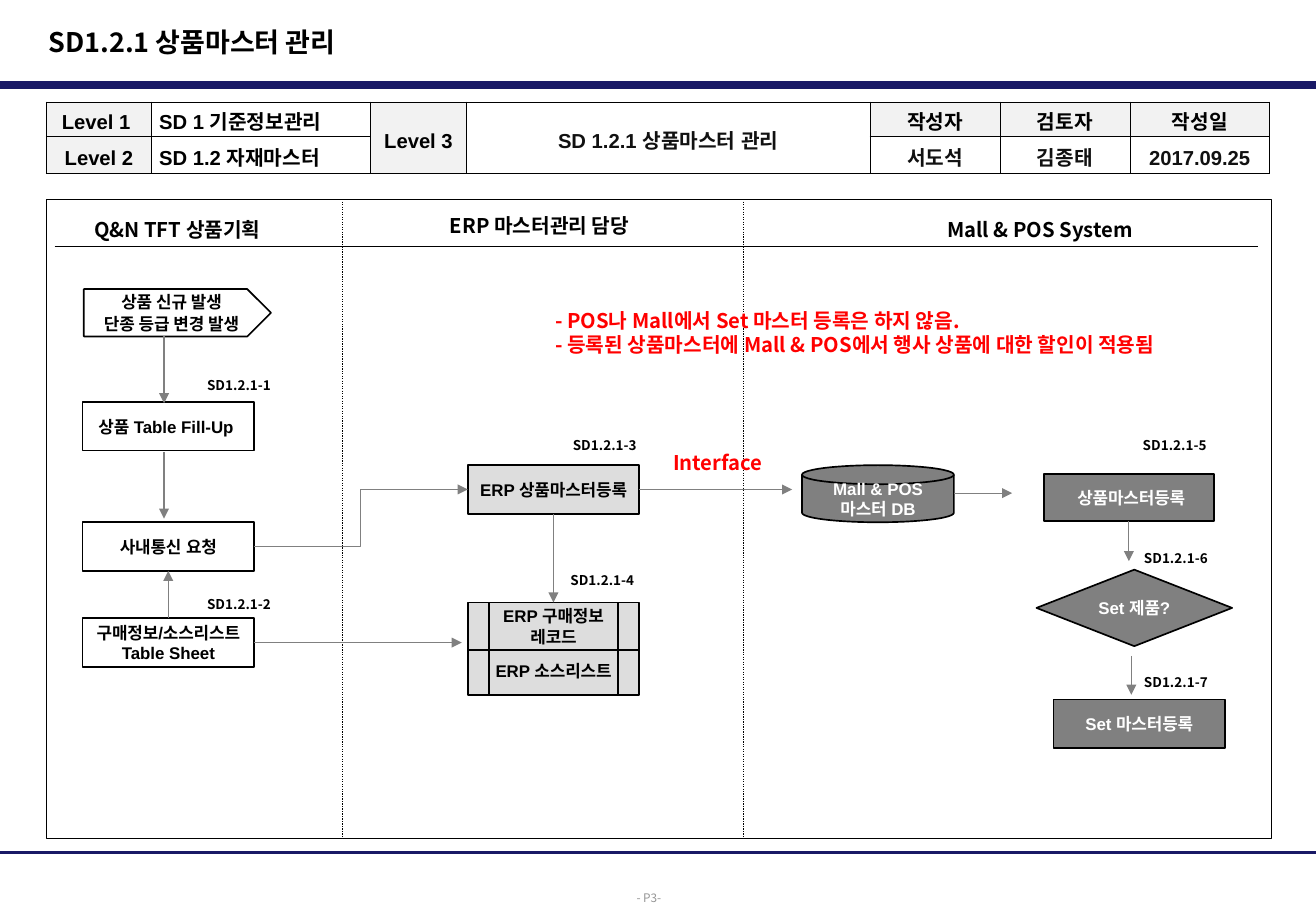
"""Build the product master process flow slide."""
import dataclasses
import typing

import lxml.etree
import pptx
import pptx.dml.color
import pptx.enum.dml
import pptx.enum.shapes
import pptx.enum.text
import pptx.oxml.ns
import pptx.shapes.autoshape
import pptx.shapes.connector
import pptx.slide
import pptx.table
import pptx.text.text
import pptx.util

Inches = pptx.util.Inches
Pt = pptx.util.Pt
Kind = pptx.enum.shapes.MSO_SHAPE
Link = pptx.enum.shapes.MSO_CONNECTOR
Align = pptx.enum.text.PP_ALIGN
Anchor = pptx.enum.text.MSO_ANCHOR
NOTO = "Noto Sans CJK KR"
ARIAL = "Arial"
BLACK, WHITE, RED, NAVY = "000000", "FFFFFF", "FF0000", "191966"
GRAY, SILVER, PALE, INK = "808080", "DDDDDD", "F2F2F2", "111111"


@dataclasses.dataclass
class Step:
    """A box of the flow."""
    name: str
    kind: Kind
    left: float
    top: float
    text: str
    fill: str
    width: float = 1.41
    height: float = 0.4
    color: str = BLACK
    font: str = ARIAL
    space: float = 0


@dataclasses.dataclass
class Note:
    """A free text on the slide."""
    left: float
    top: float
    width: float
    height: float
    text: str
    size: float = 12
    color: str = BLACK
    align: Align = Align.CENTER
    lead: float = 1.0
    bold: bool = True
    side: float = 0.1
    edge: float = 0.05
    wrap: bool = True


@dataclasses.dataclass
class Arrow:
    """An arrow with optional joined ends, each a box name and a site."""
    start: tuple[float, float]
    end: tuple[float, float]
    tail: typing.Optional[tuple[str, int]] = None
    head: typing.Optional[tuple[str, int]] = None
    kind: Link = Link.STRAIGHT


@dataclasses.dataclass
class Cell:
    """A cell of the header table."""
    row: int
    col: int
    text: str
    fill: str = ""
    color: str = BLACK
    align: Align = Align.CENTER
    tall: bool = False


def tint(code: str) -> pptx.dml.color.RGBColor:
    """Turn a hex string into a colour."""
    return pptx.dml.color.RGBColor.from_string(code)


def write(frame: pptx.text.text.TextFrame, text: str, size: float, color: str, font: str,
          align: Align, lead: float = 1.0, bold: bool = True, space: float = 0) -> None:
    """Fill a text frame, one paragraph per line."""
    for index, line in enumerate(text.split("\n")):
        para = frame.paragraphs[0] if index == 0 else frame.add_paragraph()
        para.alignment = align
        para.line_spacing = lead
        para.space_before = Pt(space if index else 0)
        run = para.add_run()
        run.text = line
        run.font.size = Pt(size)
        run.font.bold = bold
        run.font.name = font
        run.font.color.rgb = tint(color)
        east = lxml.etree.SubElement(run.font._element, pptx.oxml.ns.qn("a:ea"))
        east.set("typeface", font)


def inset(frame: pptx.text.text.TextFrame, side: float, edge: float) -> None:
    """Set the margins of a text frame."""
    frame.margin_left = frame.margin_right = Inches(side)
    frame.margin_top = frame.margin_bottom = Inches(edge)


def draw_step(slide: pptx.slide.Slide, step: Step) -> pptx.shapes.autoshape.Shape:
    """Draw one box of the flow."""
    shape = slide.shapes.add_shape(step.kind, Inches(step.left), Inches(step.top),
                                   Inches(step.width), Inches(step.height))
    shape.shadow.inherit = False
    shape.fill.solid()
    shape.fill.fore_color.rgb = tint(step.fill)
    shape.line.color.rgb = tint(BLACK)
    shape.line.width = Pt(1)
    frame = shape.text_frame
    frame.word_wrap = True
    frame.vertical_anchor = Anchor.MIDDLE
    inset(frame, 0.04, 0.05)
    write(frame, step.text, 10, step.color, step.font, Align.CENTER, space=step.space)
    return shape


def draw_note(slide: pptx.slide.Slide, note: Note) -> None:
    """Draw one free text."""
    box = slide.shapes.add_textbox(Inches(note.left), Inches(note.top),
                                   Inches(note.width), Inches(note.height))
    frame = box.text_frame
    frame.word_wrap = note.wrap
    frame.auto_size = pptx.enum.text.MSO_AUTO_SIZE.SHAPE_TO_FIT_TEXT
    inset(frame, note.side, note.edge)
    write(frame, note.text, note.size, note.color, NOTO, note.align, note.lead, note.bold)


def draw_line(slide: pptx.slide.Slide, start: tuple[float, float], end: tuple[float, float],
              color: str, width: float, kind: Link = Link.STRAIGHT) -> pptx.shapes.connector.Connector:
    """Draw a line without shadow."""
    line = slide.shapes.add_connector(kind, *map(Inches, start + end))
    line.line.color.rgb = tint(color)
    line.line.width = Pt(width)
    lxml.etree.SubElement(line._element.spPr, pptx.oxml.ns.qn("a:effectLst"))
    return line


def draw_arrow(slide: pptx.slide.Slide, arrow: Arrow,
               boxes: dict[str, pptx.shapes.autoshape.Shape]) -> None:
    """Draw one arrow and join its ends."""
    line = draw_line(slide, arrow.start, arrow.end, GRAY, 0.75, arrow.kind)
    tip = lxml.etree.SubElement(line.line._get_or_add_ln(), pptx.oxml.ns.qn("a:tailEnd"))
    tip.set("type", "triangle")
    if arrow.tail:
        line.begin_connect(boxes[arrow.tail[0]], arrow.tail[1])
    if arrow.head:
        line.end_connect(boxes[arrow.head[0]], arrow.head[1])


def rule_cell(cell: pptx.table._Cell) -> None:
    """Give a cell thin black borders and no fill."""
    props = cell._tc.get_or_add_tcPr()
    for side in ("lnL", "lnR", "lnT", "lnB"):
        line = lxml.etree.SubElement(props, pptx.oxml.ns.qn(f"a:{side}"), w=str(Pt(0.5)))
        fill = lxml.etree.SubElement(line, pptx.oxml.ns.qn("a:solidFill"))
        lxml.etree.SubElement(fill, pptx.oxml.ns.qn("a:srgbClr"), val=BLACK)
    cell.fill.background()


def draw_table(slide: pptx.slide.Slide, cells: list[Cell]) -> None:
    """Draw the header table."""
    wide, high = (0.87, 1.8, 0.79, 3.32, 1.07, 1.07, 1.15), (0.28, 0.31)
    table = slide.shapes.add_table(len(high), len(wide), Inches(0.38), Inches(0.84),
                                   Inches(sum(wide)), Inches(sum(high))).table
    table.first_row = table.horz_banding = False
    for col, width in zip(table.columns, wide):
        col.width = Inches(width)
    for row, height in zip(table.rows, high):
        row.height = Inches(height)
    for cell in table.iter_cells():
        rule_cell(cell)
    for item in cells:
        cell = table.cell(item.row, item.col)
        if item.tall:
            cell.merge(table.cell(item.row + 1, item.col))
        cell.vertical_anchor = Anchor.MIDDLE
        cell.margin_left = cell.margin_right = Inches(0.06)
        cell.margin_top = cell.margin_bottom = Inches(0.01)
        if item.fill:
            cell.fill.solid()
            cell.fill.fore_color.rgb = tint(item.fill)
        write(cell.text_frame, item.text, 12, item.color, ARIAL, item.align, 1.3)


CELLS = [
    Cell(0, 0, "Level 1 ", PALE), Cell(0, 1, "SD 1 기준정보관리", align=Align.LEFT),
    Cell(0, 2, "Level 3", PALE, tall=True),
    Cell(0, 3, "SD 1.2.1 상품마스터 관리", color=INK, tall=True),
    Cell(0, 4, "작성자", PALE), Cell(0, 5, "검토자", PALE), Cell(0, 6, "작성일", PALE),
    Cell(1, 0, "Level 2", PALE), Cell(1, 1, "SD 1.2 자재마스터", align=Align.LEFT),
    Cell(1, 4, "서도석", color=INK), Cell(1, 5, "김종태", color=INK),
    Cell(1, 6, "2017.09.25", color=INK),
]
RECT, TWIN = Kind.RECTANGLE, Kind.FLOWCHART_PREDEFINED_PROCESS
STEPS = [
    Step("Start", Kind.PENTAGON, 0.69, 2.38, "상품 신규 발생\n단종 등급 변경 발생", WHITE,
         1.54, 0.39, font=NOTO, space=1),
    Step("Fill", RECT, 0.68, 3.31, "상품 Table Fill-Up ", WHITE),
    Step("Request", RECT, 0.68, 4.3, "사내통신 요청", WHITE),
    Step("Sheet", RECT, 0.68, 5.09, "구매정보/소스리스트\nTable Sheet", WHITE),
    Step("Master", RECT, 3.85, 3.83, "ERP 상품마스터등록", SILVER),
    Step("Source", TWIN, 3.85, 5.33, "ERP 소스리스트", SILVER, height=0.39),
    Step("Record", TWIN, 3.85, 4.96, "ERP 구매정보\n레코드", SILVER, height=0.39),
    Step("Store", Kind.FLOWCHART_MAGNETIC_DISK, 6.6, 3.83, "Mall & POS\n마스터 DB", GRAY,
         1.25, 0.47, WHITE),
    Step("Entry", RECT, 8.59, 3.9, " 상품마스터등록", GRAY, 1.4, 0.39, WHITE),
    Step("Choice", Kind.DIAMOND, 8.53, 4.69, "Set 제품?", GRAY, 1.61, 0.63, WHITE),
    Step("Set", RECT, 8.67, 5.76, "Set 마스터등록", GRAY, color=WHITE),
]
ARROWS = [
    Arrow((1.35, 2.77), (1.35, 3.32)),
    Arrow((1.35, 3.72), (1.35, 4.27)),
    Arrow((2.09, 4.5), (3.85, 4.03), ("Request", 3), ("Master", 1), Link.ELBOW),
    Arrow((5.26, 4.03), (6.52, 4.03), ("Master", 3)),
    Arrow((7.85, 4.06), (8.33, 4.06)),
    Arrow((9.29, 4.29), (9.29, 4.62), ("Entry", 2)),
    Arrow((9.31, 5.4), (9.31, 5.72)),
    Arrow((1.38, 5.09), (1.38, 4.7), ("Sheet", 0), ("Request", 2)),
    Arrow((2.09, 5.29), (3.8, 5.29), ("Sheet", 3)),
    Arrow((4.56, 4.23), (4.56, 4.96), ("Master", 2), ("Record", 0)),
]
TAGS = [(1.64, 3.06), (1.64, 4.87), (4.65, 3.56), (4.63, 4.67), (9.34, 3.56), (9.35, 4.49), (9.35, 5.51)]
NOTES = [
    Note(3.26, 1.65, 2.4, 0.36, "ERP 마스터관리 담당 ", lead=1.3),
    Note(7.46, 1.68, 2.2, 0.36, "Mall & POS System", lead=1.3),
    Note(0.38, 1.68, 2.16, 0.36, "Q&N TFT 상품기획", lead=1.3),
    Note(5.44, 3.66, 1.02, 0.3, "Interface", color=RED, align=Align.LEFT),
    Note(4.47, 2.49, 5.98, 0.5, "- POS나 Mall에서 Set 마스터 등록은 하지 않음.\n"
         "- 등록된 상품마스터에 Mall & POS에서 행사 상품에 대한 할인이 적용됨",
         color=RED, align=Align.LEFT),
    Note(5.14, 7.29, 0.5, 0.2, "- P3-", 7, "969696", Align.LEFT, 1.3, False, edge=0.01, wrap=False),
] + [Note(left, top, 0.59, 0.21, f"SD1.2.1-{count}", 8, align=Align.RIGHT, side=0, edge=0.04)
     for count, (left, top) in enumerate(TAGS, 1)]


def main() -> None:
    """Build and save the slide."""
    deck = pptx.Presentation()
    deck.slide_width, deck.slide_height = Inches(10.83), Inches(7.5)
    slide = deck.slides.add_slide(deck.slide_layouts[5])
    title = slide.shapes.title
    title.left, title.top, title.width, title.height = map(Inches, (0.3, 0.16, 7.15, 0.37))
    title.text_frame.vertical_anchor = Anchor.MIDDLE
    write(title.text_frame, "SD1.2.1 상품마스터 관리", 16, BLACK, NOTO, Align.LEFT)
    for top, width in ((0.7, 4.5), (7.02, 1.5)):
        draw_line(slide, (0, top), (10.83, top), NAVY, width)
    frame = slide.shapes.add_shape(RECT, Inches(0.38), Inches(1.64), Inches(10.08), Inches(5.26))
    frame.shadow.inherit = False
    frame.fill.background()
    frame.line.color.rgb = tint(BLACK)
    frame.line.width = Pt(0.5)
    draw_line(slide, (0.45, 2.03), (10.35, 2.03), BLACK, 0.75)
    for left in (2.82, 6.12):
        lane = draw_line(slide, (left, 1.64), (left, 6.89), BLACK, 0.75)
        lane.line.dash_style = pptx.enum.dml.MSO_LINE.ROUND_DOT
    draw_table(slide, CELLS)
    boxes = {step.name: draw_step(slide, step) for step in STEPS}
    for arrow in ARROWS:
        draw_arrow(slide, arrow, boxes)
    for note in NOTES:
        draw_note(slide, note)
    deck.save("out.pptx")


if __name__ == "__main__":
    main()
